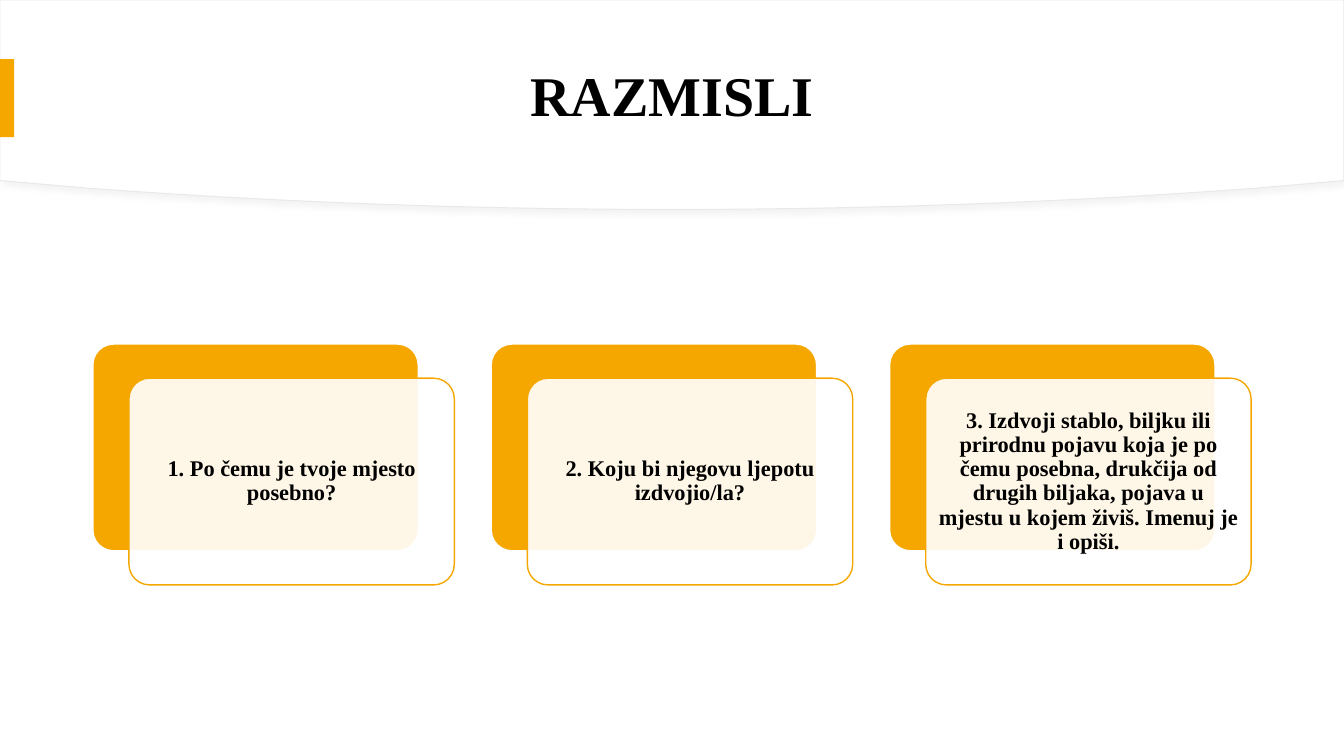
from lxml import etree
from pptx import Presentation
from pptx.dml.color import RGBColor
from pptx.enum.shapes import MSO_SHAPE as SHAPE
from pptx.enum.text import MSO_ANCHOR as ANCHOR, PP_ALIGN as ALIGN
from pptx.oxml.ns import qn
from pptx.util import Cm, Pt

ORANGE, WHITE, GREY = "F5A700", "FFFFFF", "E9E9E9"
WIDTH, HEIGHT = 33.87, 19.05


def paint(sp, fill, line=None, weight=1):
    sp.shadow.inherit = False
    sp.fill.solid()
    sp.fill.fore_color.rgb = RGBColor.from_string(fill)
    if line:
        sp.line.color.rgb = RGBColor.from_string(line)
        sp.line.width = Pt(weight)
    else:
        sp.line.fill.background()


def write(left, top, width, height, text, size, inset):
    tf = s.shapes.add_textbox(Cm(left), Cm(top), Cm(width), Cm(height)).text_frame
    tf.word_wrap = True
    tf.vertical_anchor = ANCHOR.MIDDLE
    tf.margin_left = tf.margin_right = tf.margin_top = tf.margin_bottom = Cm(inset)
    tf.text = text
    p = tf.paragraphs[0]
    p.alignment = ALIGN.CENTER
    p.line_spacing = 0.9
    r = p.runs[0]
    r.font.name = "Times New Roman"
    r.font.size = Pt(size)
    r.font.bold = True
    r.font.color.rgb = RGBColor.from_string("000000")


prs = Presentation()
prs.slide_width, prs.slide_height = Cm(WIDTH), Cm(HEIGHT)
s = prs.slides.add_slide(prs.slide_layouts[6])
s.background.fill.solid()
s.background.fill.fore_color.rgb = RGBColor.from_string(WHITE)

ctrl = [(2.31, 4.75), (6.81, 5.08), (11.76, 5.28), (WIDTH / 2, 5.28)]
left_half = [(0, 4.55)]
for i in range(25):
    t = i / 24
    weights = [(1 - t) ** 3, 3 * t * (1 - t) ** 2, 3 * t ** 2 * (1 - t), t ** 3]
    left_half.append(tuple(sum(w * c[k] for w, c in zip(weights, ctrl)) for k in (0, 1)))
right_half = [(WIDTH - x, y) for x, y in left_half[:-1]]
outline = [(WIDTH, 0)] + right_half + left_half[::-1]
builder = s.shapes.build_freeform(0, 0)
builder.add_line_segments([(Cm(x), Cm(y)) for x, y in outline], close=True)
header = builder.convert_to_shape()
paint(header, WHITE, GREY, 0.75)
effects = header.fill._xPr.find(qn("a:effectLst"))
shadow = etree.SubElement(effects, qn("a:outerShdw"), blurRad=str(Pt(4)), dist=str(Pt(3)),
                          dir="2700000", algn="tl", rotWithShape="0")
tint = etree.SubElement(shadow, qn("a:srgbClr"), val="D9D9D9")
etree.SubElement(tint, qn("a:alpha"), val="30000")

write(2.33, 0.71, 29.21, 3.53, "RAZMISLI", 40, 0.2)
accent = s.shapes.add_shape(SHAPE.RECTANGLE, 0, Cm(1.49), Cm(0.36), Cm(1.97))
paint(accent, ORANGE)

questions = [
    "1. Po čemu je tvoje mjesto posebno?",
    "2. Koju bi njegovu ljepotu izdvojio/la?",
    "3. Izdvoji stablo, biljku ili prirodnu pojavu koja je po čemu posebna, "
    "drukčija od drugih biljaka, pojava u mjestu u kojem živiš. Imenuj je i opiši.",
]
LEFT, TOP, PITCH = 2.34, 8.67, 10.04
CARD_W, CARD_H = 8.2, 5.21
for i, question in enumerate(questions):
    x = LEFT + i * PITCH
    for dx, dy, fill, line in ((0, 0, ORANGE, WHITE), (0.91, 0.86, WHITE, ORANGE)):
        card = s.shapes.add_shape(SHAPE.ROUNDED_RECTANGLE, Cm(x + dx), Cm(TOP + dy),
                                  Cm(CARD_W), Cm(CARD_H))
        card.adjustments[0] = 0.1
        paint(card, fill, line)
    color = card.fill._xPr.find(qn("a:solidFill"))[0]
    etree.SubElement(color, qn("a:alpha"), val="90000")
    write(x + 1.06, TOP + 1.01, CARD_W - 0.3, CARD_H - 0.3, question, 16, 0.17)

prs.save("out.pptx")
